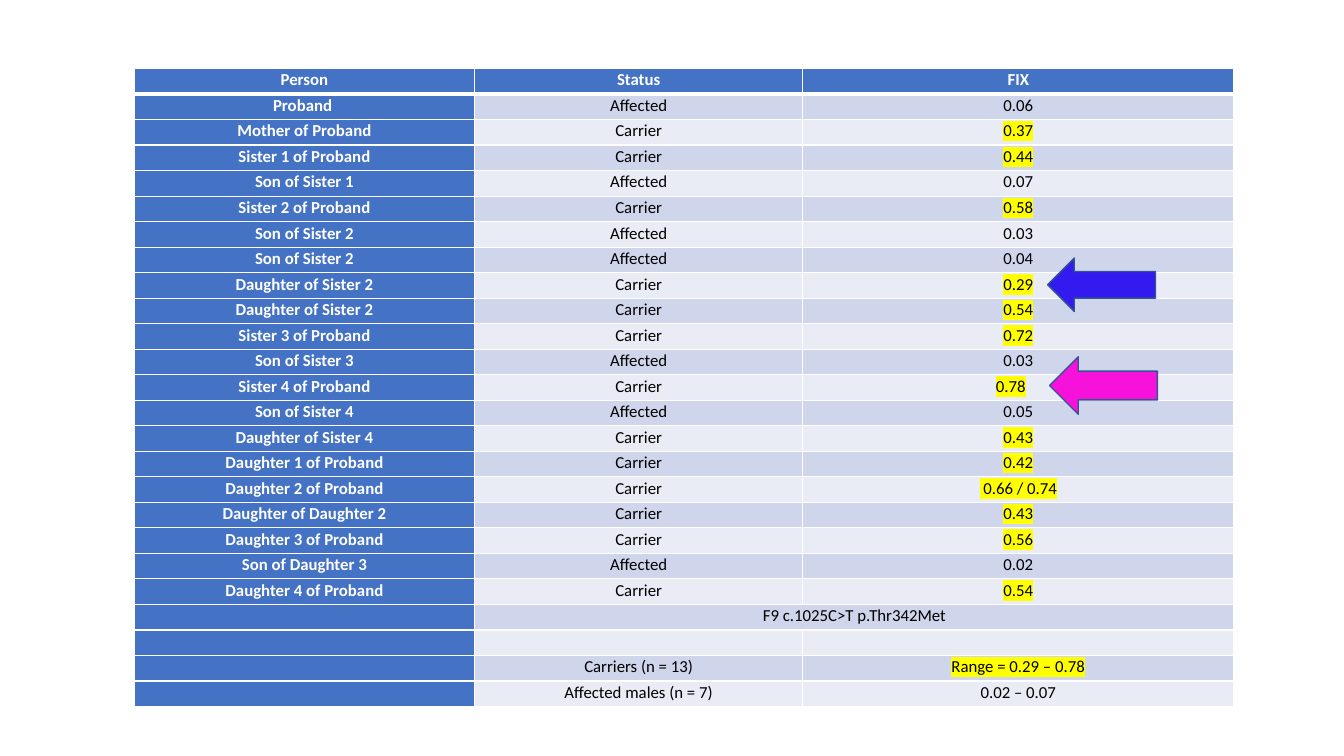
from lxml import etree
from pptx import Presentation
from pptx.dml.color import RGBColor
from pptx.enum.shapes import MSO_SHAPE as Shape
from pptx.enum.text import PP_ALIGN as Align
from pptx.oxml.ns import qn
from pptx.util import Inches, Pt

BLUE, WHITE, BLACK, YELLOW = "4472C4", "FFFFFF", "000000", "FFFF00"
BANDS = ("E9EBF5", "CFD5EA")
COLUMN_WIDTHS = (3.38, 3.25, 4.28)
MERGED_TEXT = "F9 c.1025C>T p.Thr342Met"
SHIFTED_VALUE = "0.78"  # sits a little left of centre, beside its arrow

ROWS = [
    ("Person", "Status", "FIX"),
    ("Proband ", "Affected", "0.06"),
    ("Mother of Proband", "Carrier", "0.37"),
    ("Sister 1 of Proband", "Carrier", "0.44"),
    ("Son of Sister 1", "Affected", "0.07"),
    ("Sister 2 of Proband", "Carrier", "0.58"),
    ("Son of Sister 2", "Affected", "0.03"),
    ("Son of Sister 2", "Affected", "0.04"),
    ("Daughter of Sister 2", "Carrier", "0.29"),
    ("Daughter of Sister 2", "Carrier", "0.54"),
    ("Sister 3 of Proband", "Carrier", "0.72"),
    ("Son of Sister 3", "Affected", "0.03"),
    ("Sister 4 of Proband", "Carrier", "0.78"),
    ("Son of Sister 4", "Affected", "0.05"),
    ("Daughter of Sister 4", "Carrier", "0.43"),
    ("Daughter 1 of Proband", "Carrier", "0.42"),
    ("Daughter 2 of Proband", "Carrier", " 0.66 / 0.74"),
    ("Daughter of Daughter 2", "Carrier", "0.43"),
    ("Daughter 3 of Proband", "Carrier", "0.56"),
    ("Son of Daughter 3", "Affected", "0.02"),
    ("Daughter 4 of Proband", "Carrier", "0.54"),
    ("", MERGED_TEXT, ""),
    ("", "", ""),
    ("", "Carriers (n = 13)", "Range = 0.29 – 0.78"),
    ("", "Affected males (n = 7)", "0.02 – 0.07"),
]


def color(value):
    return RGBColor.from_string(value)


def add_color_element(parent, tag, value):
    element = etree.SubElement(parent, qn(tag))
    etree.SubElement(element, qn("a:srgbClr"), val=value)
    return element


def set_borders(cell, top, bottom):
    """Draw white borders; widths are in points."""
    properties = cell._tc.get_or_add_tcPr()
    widths = {"a:lnL": 1, "a:lnR": 1, "a:lnT": top, "a:lnB": bottom}
    for index, (tag, width) in enumerate(widths.items()):
        line = etree.Element(qn(tag), w=str(Pt(width)))
        add_color_element(line, "a:solidFill", WHITE)
        properties.insert(index, line)


def write_cell(cell, text, text_color, bold, highlighted):
    cell.margin_left = cell.margin_right = Inches(0.08)
    cell.margin_top = cell.margin_bottom = 0
    if text == SHIFTED_VALUE:
        cell.margin_right = Inches(0.23)
    paragraph = cell.text_frame.paragraphs[0]
    paragraph.text = text
    paragraph.alignment = Align.CENTER
    paragraph.line_spacing = 1.07
    for run in paragraph.runs:
        run.font.name = "Calibri"
        run.font.size = Pt(12)
        run.font.bold = bold
        run.font.color.rgb = color(text_color)
        if highlighted:
            properties = run._r.get_or_add_rPr()
            highlight = add_color_element(properties, "a:highlight", YELLOW)
            properties.find(qn("a:solidFill")).addnext(highlight)
    # Keeps empty rows as low as the others
    etree.SubElement(paragraph._p, qn("a:endParaRPr"), sz="1200")


def add_family_table(slide, left, top, width, height):
    frame = slide.shapes.add_table(len(ROWS), len(COLUMN_WIDTHS), Inches(left),
                                   Inches(top), Inches(width), Inches(height))
    table = frame.table
    for column, column_width in zip(table.columns, COLUMN_WIDTHS):
        column.width = Inches(column_width)
    for row_index, texts in enumerate(ROWS):
        table.rows[row_index].height = Inches(height / len(ROWS))
        for column_index, text in enumerate(texts):
            cell = table.cell(row_index, column_index)
            heading = row_index == 0 or column_index == 0
            carrier_value = column_index == 2 and texts[1].startswith("Carrier")
            cell.fill.solid()
            cell.fill.fore_color.rgb = color(BLUE if heading else BANDS[row_index % 2])
            set_borders(cell, top=3 if row_index == 1 else 1,
                        bottom=3 if row_index == 0 else 1)
            write_cell(cell, text, WHITE if heading else BLACK, heading, carrier_value)
        if texts[1] == MERGED_TEXT:
            table.cell(row_index, 1).merge(table.cell(row_index, 2))


def add_pointer(slide, left, top, width, height, fill):
    """Add an upright arrow turned to point left."""
    arrow = slide.shapes.add_shape(Shape.UP_ARROW, Inches(left), Inches(top),
                                   Inches(width), Inches(height))
    arrow.rotation = 270
    arrow.shadow.inherit = False
    arrow.fill.solid()
    arrow.fill.fore_color.rgb = color(fill)
    arrow.line.color.rgb = color("325491")
    arrow.line.width = Pt(1)


def main():
    presentation = Presentation()
    presentation.slide_width = Inches(13.33)
    presentation.slide_height = Inches(7.5)
    slide = presentation.slides.add_slide(presentation.slide_layouts[6])
    add_family_table(slide, 1.33, 0.68, sum(COLUMN_WIDTHS), 6.33)
    # Pointers to the highest and the lowest carrier values
    add_pointer(slide, 10.66, 3.29, 0.57, 1.07, "F612DB")
    add_pointer(slide, 10.66, 2.29, 0.53, 1.07, "331AEE")
    presentation.save("out.pptx")


if __name__ == "__main__":
    main()
